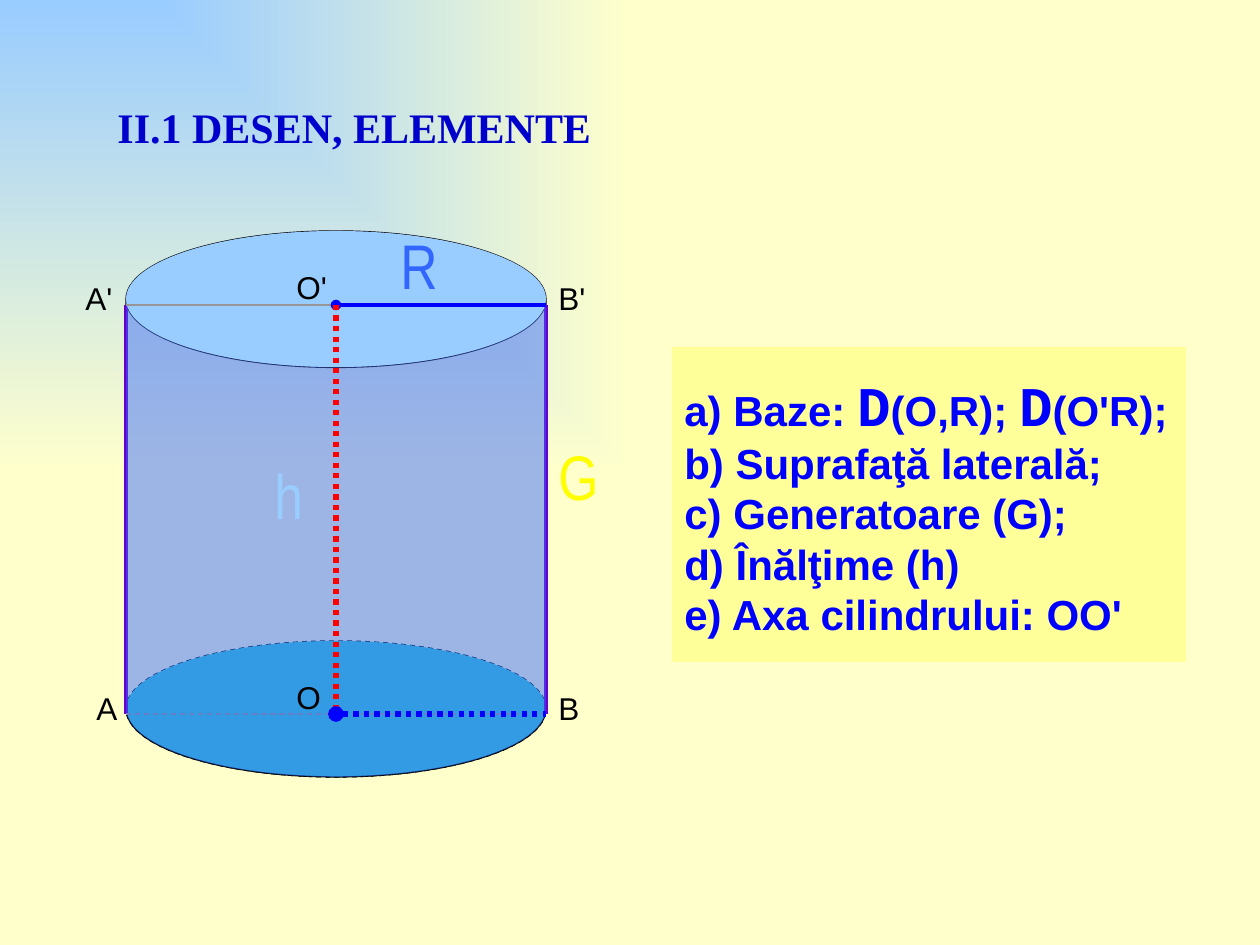
from lxml import etree
from pptx import Presentation
from pptx.dml.color import RGBColor
from pptx.enum.dml import MSO_LINE
from pptx.enum.shapes import MSO_CONNECTOR, MSO_SHAPE
from pptx.enum.text import MSO_ANCHOR, PP_ALIGN
from pptx.oxml.ns import qn
from pptx.util import Pt

PX = 914400 // 126
STRAIGHT = MSO_CONNECTOR.STRAIGHT
CAN, OVAL, RECT = MSO_SHAPE.CAN, MSO_SHAPE.OVAL, MSO_SHAPE.RECTANGLE
DASH, DOT = MSO_LINE.DASH, MSO_LINE.ROUND_DOT
COLORS = {
    "sky": "99CCFF", "cream": "FFFFCC", "teal": "33CCCC", "azure": "3366FF",
    "violet": "6600CC", "gray": "969696", "blue": "0000FF", "navy": "0000CC",
    "red": "FF0000", "black": "000000", "yellow": "FFFF00", "panel": "FFFF99",
}

# Content
TITLE = "II.1 DESEN, ELEMENTE"
ELEMENTS = [
    [("a) Baze: ", False), ("D", True), ("(O,R); ", False), ("D", True), ("(O'R);", False)],
    [("b) Suprafaţă laterală;", False)],
    [("c) Generatoare (G);", False)],
    [("d) Înălţime (h)", False)],
    [("e) Axa cilindrului: OO'", False)],
]
POINTS = [("A", 84, 683), ("B", 546, 683), ("A'", 73, 273),
          ("O", 284, 672), ("B'", 546, 273), ("O'", 284, 262)]
MEASURES = [("G", 546, 431, 42, "yellow"), ("R", 388, 220, 34, "azure"),
            ("h", 262, 450, 34, "sky")]

# Cylinder geometry
LEFT, TOP, WIDTH, HEIGHT, BASE = 126, 231, 420, 546, 136
RIGHT, MIDDLE = LEFT + WIDTH, LEFT + WIDTH // 2
UPPER, LOWER = 305, 714
BODY = (LEFT, TOP, WIDTH, HEIGHT)
TOP_BASE = (LEFT, TOP, WIDTH, BASE)
LOW_BASE = (LEFT, TOP + HEIGHT - BASE, WIDTH, BASE)


def emu(*lengths):
    return [length * PX for length in lengths]


def rgb(name):
    return RGBColor.from_string(COLORS[name])


def add_solid(page, kind, place, fill=None, line=None, dash=None, alpha=None):
    shape = page.shapes.add_shape(kind, *emu(*place))
    shape.shadow.inherit = False
    if kind == CAN:
        shape.adjustments[0] = 0.325
    if fill:
        shape.fill.solid()
        shape.fill.fore_color.rgb = rgb(fill)
    else:
        shape.fill.background()
    if alpha:
        color = shape._element.spPr.find(qn("a:solidFill"))[0]
        etree.SubElement(color, qn("a:alpha"), val=str(alpha * 1000))
    if line:
        shape.line.color.rgb = rgb(line)
        shape.line.width = Pt(0.75)
        shape.line.dash_style = dash
    else:
        shape.line.fill.background()
    return shape


def add_segment(page, ends, color, width, dash=None, dot=False):
    segment = page.shapes.add_connector(STRAIGHT, *emu(*ends))
    segment.line.color.rgb = rgb(color)
    segment.line.width = Pt(width)
    segment.line.dash_style = dash
    if dot:
        etree.SubElement(segment.line._get_or_add_ln(), qn("a:headEnd"), type="oval")
    etree.SubElement(segment._element.spPr, qn("a:effectLst"))


def set_font(font, name, size, color, bold=False):
    font.name, font.size, font.bold = name, Pt(size), bold
    font.color.rgb = rgb(color)


def add_label(page, text, place, name, size, color, bold=False, centered=False):
    box = page.shapes.add_textbox(*emu(*place))
    box.text_frame.word_wrap = not centered
    para = box.text_frame.paragraphs[0]
    para.text = text
    para.alignment = PP_ALIGN.CENTER if centered else PP_ALIGN.LEFT
    set_font(para.font, name, size, color, bold)


def set_background(page):
    fill = page.background.fill
    fill.gradient()
    for stop, name, position in zip(fill.gradient_stops, ("sky", "cream"), (0, 1)):
        stop.color.rgb = rgb(name)
        stop.position = position
    gradient = page._element.cSld.find(".//" + qn("a:gradFill"))
    gradient.remove(gradient.find(qn("a:lin")))
    corner = etree.SubElement(gradient, qn("a:path"), path="rect")
    etree.SubElement(corner, qn("a:fillToRect"), r="100000", b="100000")


def add_cylinder(page):
    # Lower base, outline and generators
    add_solid(page, OVAL, LOW_BASE, line="black", dash=DASH)
    add_solid(page, OVAL, LOW_BASE, fill="teal")
    add_solid(page, CAN, BODY, line="black")
    for x in (RIGHT, LEFT):
        add_segment(page, (x, UPPER, x, LOWER), "violet", 2.5)
    add_segment(page, (LEFT, LOWER, RIGHT, LOWER), "gray", 0.75, DASH)
    # Translucent body and upper base
    add_solid(page, CAN, BODY, fill="azure", alpha=48)
    add_solid(page, OVAL, TOP_BASE, fill="sky")
    add_segment(page, (LEFT, UPPER, RIGHT, UPPER), "gray", 0.75)
    # Radii and axis
    add_segment(page, (MIDDLE, UPPER, RIGHT, UPPER), "blue", 2, dot=True)
    add_segment(page, (MIDDLE, UPPER, MIDDLE, LOWER), "red", 3, DOT)
    add_segment(page, (MIDDLE, LOWER, RIGHT, LOWER), "blue", 3, DOT, dot=True)


def add_elements(page):
    panel = add_solid(page, RECT, (672, 347, 514, 315), fill="panel")
    frame = panel.text_frame
    frame.word_wrap = False
    frame.vertical_anchor = MSO_ANCHOR.MIDDLE
    for index, parts in enumerate(ELEMENTS):
        para = frame.add_paragraph() if index else frame.paragraphs[0]
        para.alignment = PP_ALIGN.LEFT
        set_font(para.font, "Arial", 24, "blue", True)
        for text, is_disc in parts:
            span = para.add_run()
            span.text = text
            if is_disc:
                span.font.name, span.font.size = "Courier New", Pt(32)


def main():
    deck = Presentation()
    deck.slide_width, deck.slide_height = emu(1260, 945)
    page = deck.slides.add_slide(deck.slide_layouts[6])
    set_background(page)
    add_cylinder(page)
    for text, x, y, width, color in MEASURES:
        add_label(page, text, (x, y, width, 75), "Arial Narrow", 36, color, centered=True)
    for text, x, y in POINTS:
        add_label(page, text, (x, y, 73, 50), "Arial", 18, "black")
    add_elements(page)
    add_label(page, TITLE, (105, 95, 535, 63), "Times New Roman", 24, "navy", bold=True)
    deck.save("out.pptx")


if __name__ == "__main__":
    main()
